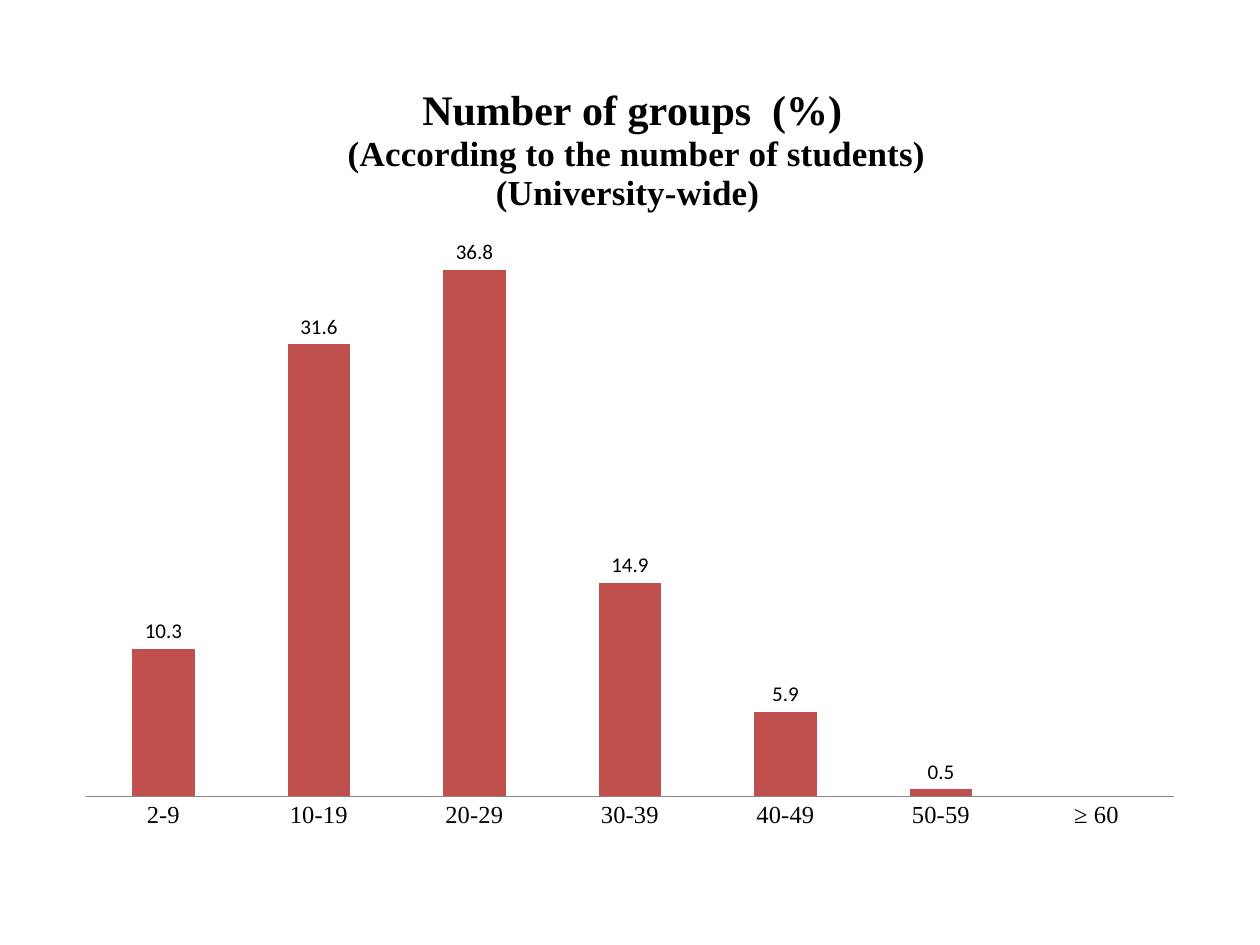
from lxml import etree
from pptx import Presentation
from pptx.chart.data import CategoryChartData
from pptx.dml.color import RGBColor
from pptx.enum.chart import XL_CHART_TYPE, XL_LABEL_POSITION, XL_TICK_MARK
from pptx.oxml.ns import qn
from pptx.util import Inches, Pt

COLUMN_CLUSTERED = XL_CHART_TYPE.COLUMN_CLUSTERED
OUTSIDE_END = XL_LABEL_POSITION.OUTSIDE_END
NO_TICK = XL_TICK_MARK.NONE

TITLE_LINES = [
    ("Number of groups  (%)", 24),
    (" (According to the number of students)", 20),
    ("(University-wide) ", 20),
]
GROUP_SHARES = {
    "2-9": 10.3,
    "10-19": 31.6,
    "20-29": 36.8,
    "30-39": 14.9,
    "40-49": 5.9,
    "50-59": 0.5,
    "≥ 60": None,
}
THEME = {
    "bar": RGBColor(0xC0, 0x50, 0x4D),
    "text": RGBColor(0, 0, 0),
    "axis": RGBColor(0x86, 0x86, 0x86),
    "body_font": "Calibri",
    "heading_font": "Times New Roman",
    "body_size": Pt(10),
    "label_size": Pt(12),
    "category_size": Pt(14),
}
CHART_BOX = (0.5, 0.39, 9, 6.31)
TITLE_LAYOUT = {"xMode": "edge", "yMode": "edge", "x": 0.24, "y": 0.04}
PLOT_LAYOUT = {
    "layoutTarget": "inner", "xMode": "edge", "yMode": "edge",
    "x": 0.02, "y": 0.22, "w": 0.96, "h": 0.72,
}


def style_font(font, name, size):
    font.name = name
    font.size = size
    font.color.rgb = THEME["text"]


def set_layout(parent, position, settings):
    for existing in parent.findall(qn("c:layout")):
        parent.remove(existing)
    layout = etree.Element(qn("c:layout"))
    manual = etree.SubElement(layout, qn("c:manualLayout"))
    for tag, value in settings.items():
        etree.SubElement(manual, qn(f"c:{tag}")).set("val", str(value))
    parent.insert(position, layout)


def add_title(chart):
    chart.has_title = True
    title = chart.chart_title
    title.include_in_layout = False
    frame = title.text_frame
    for index, (text, size) in enumerate(TITLE_LINES):
        paragraph = frame.add_paragraph() if index else frame.paragraphs[0]
        run = paragraph.add_run()
        run.text = text
        for font in (paragraph.font, run.font):
            style_font(font, THEME["heading_font"], Pt(size))
            font.bold = True
    set_layout(title._element, 1, TITLE_LAYOUT)


def style_axes(chart):
    category_axis = chart.category_axis
    category_axis.major_tick_mark = NO_TICK
    category_axis.format.line.color.rgb = THEME["axis"]
    style_font(category_axis.tick_labels.font, THEME["heading_font"], THEME["category_size"])
    value_axis = chart.value_axis
    value_axis.minimum_scale = 0
    value_axis.maximum_scale = 40
    value_axis.has_major_gridlines = False
    value_axis.visible = False


def style_columns(plot):
    plot.gap_width = 150
    plot.overlap = -25
    plot.vary_by_categories = False
    fill = plot.series[0].format.fill
    fill.solid()
    fill.fore_color.rgb = THEME["bar"]
    labels = plot.series[0].data_labels
    labels.show_value = True
    labels.position = OUTSIDE_END
    style_font(labels.font, THEME["body_font"], THEME["label_size"])


def build_slide():
    """Build a slide charting the share of groups by number of students."""
    presentation = Presentation()
    presentation.slide_width = Inches(10)
    presentation.slide_height = Inches(7.5)
    slide = presentation.slides.add_slide(presentation.slide_layouts[6])

    data = CategoryChartData()
    data.categories = list(GROUP_SHARES)
    data.add_series("Series 1", list(GROUP_SHARES.values()))
    box = [Inches(length) for length in CHART_BOX]
    chart = slide.shapes.add_chart(COLUMN_CLUSTERED, *box, data).chart
    chart.has_legend = False
    style_font(chart.font, THEME["body_font"], THEME["body_size"])
    add_title(chart)
    style_axes(chart)
    style_columns(chart.plots[0])
    set_layout(chart.plots[0]._element.getparent(), 0, PLOT_LAYOUT)
    presentation.save("out.pptx")


if __name__ == "__main__":
    build_slide()
